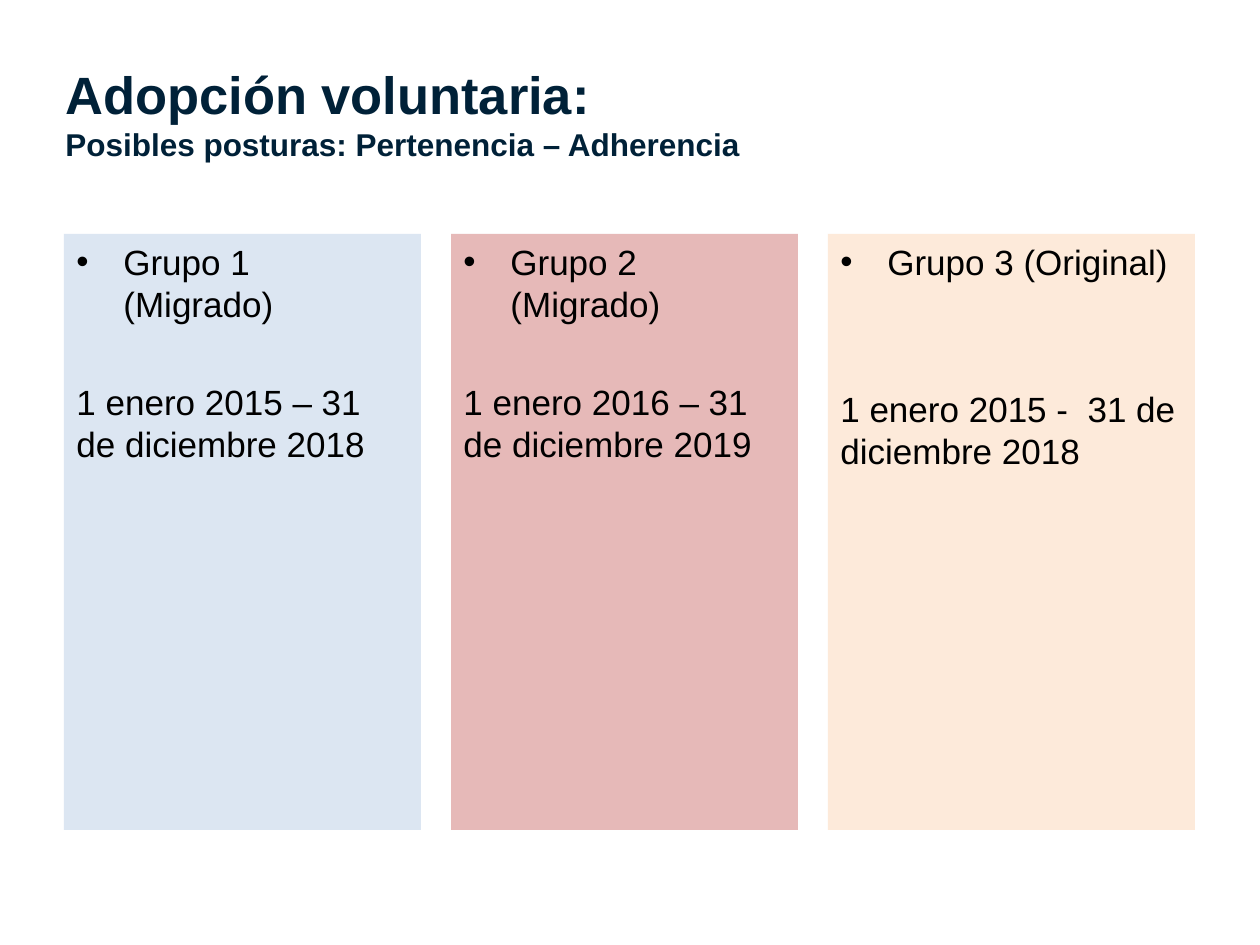
from pptx import Presentation
from pptx.dml.color import RGBColor
from pptx.enum.shapes import MSO_SHAPE
from pptx.enum.text import MSO_ANCHOR, PP_ALIGN
from pptx.util import Emu, Pt
from lxml.etree import SubElement
from pptx.oxml.ns import qn

SCALE = 914400 / 126
HUES = {"navy": "002138", "black": "000000", "blue": "DCE6F2",
        "rose": "E6B9B8", "peach": "FDEADA"}


def px(num):
    return Emu(round(num * SCALE))


class Deck:
    font = "Arial"

    def __init__(self, wide, high):
        self.prs = Presentation()
        self.prs.slide_width, self.prs.slide_height = px(wide), px(high)
        self.slide = self.prs.slides.add_slide(self.prs.slide_layouts[6])

    def label(self, para, text, hue, **style):
        para.text = text
        for key, val in {"name": self.font, **style}.items():
            setattr(para.font, key, val)
        para.font.color.rgb = RGBColor.from_string(HUES[hue])

    def title(self, box, lines):
        frame = self.slide.shapes.add_textbox(*map(px, box)).text_frame
        frame.word_wrap = True
        frame.vertical_anchor = MSO_ANCHOR.MIDDLE
        for num, (text, size) in enumerate(lines):
            para = frame.add_paragraph() if num else frame.paragraphs[0]
            self.label(para, text, "navy", size=Pt(size), bold=True)

    def bullet(self, para, indent):
        props = para._p.get_or_add_pPr()
        props.set("marL", str(px(indent)))
        props.set("indent", str(-px(indent)))
        SubElement(props, qn("a:buFont"), typeface=self.font)
        SubElement(props, qn("a:buChar"), char="•")

    def panel(self, box, hue, head, dates, gap):
        shape = self.slide.shapes.add_shape(MSO_SHAPE.RECTANGLE, *map(px, box))
        shape.shadow.inherit = False
        shape.fill.solid()
        shape.fill.fore_color.rgb = RGBColor.from_string(HUES[hue])
        shape.line.fill.background()
        frame = shape.text_frame
        frame.word_wrap = True
        frame.vertical_anchor = MSO_ANCHOR.TOP
        first, last = frame.paragraphs[0], frame.add_paragraph()
        self.bullet(first, 47)
        last.space_before = Pt(gap)
        for para, text in ((first, head), (last, dates)):
            para.alignment = PP_ALIGN.LEFT
            para.line_spacing = Pt(24)
            self.label(para, text, "black", size=Pt(20))


def main():
    deck = Deck(1260, 945)

    # Heading
    deck.title((53, 78, 775, 68), [
        ("Adopción voluntaria:", 30),
        ("Posibles posturas: Pertenencia – Adherencia", 18)])

    # Group panels, left to right with equal gaps
    groups = [
        (357, "blue", "Grupo 1 (Migrado)",
         "1 enero 2015 – 31 de diciembre 2018", 32),
        (347, "rose", "Grupo 2 (Migrado)",
         "1 enero 2016 – 31 de diciembre 2019", 32),
        (367, "peach", "Grupo 3 (Original)",
         "1 enero 2015 -  31 de diciembre 2018", 60)]
    left = 64
    for wide, *rest in groups:
        deck.panel((left, 234, wide, 596), *rest)
        left += wide + 30

    deck.prs.save("out.pptx")


if __name__ == "__main__":
    main()
